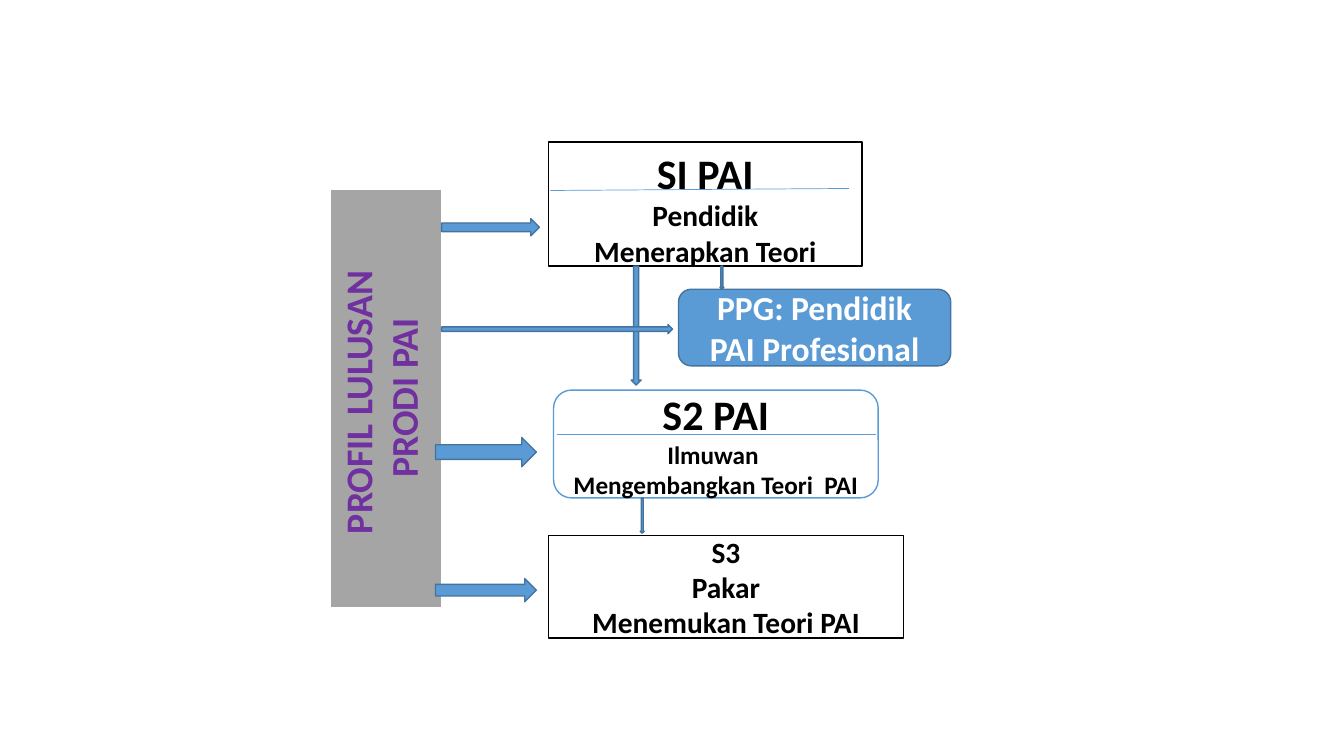
from lxml.etree import SubElement
from pptx import Presentation
from pptx.dml.color import RGBColor
from pptx.enum.shapes import MSO_CONNECTOR, MSO_SHAPE
from pptx.enum.text import MSO_ANCHOR, MSO_AUTO_SIZE, PP_ALIGN
from pptx.oxml.ns import qn
from pptx.util import Pt

EMU_PER_PX = 9144
COLOURS = {
    "white": "FFFFFF",
    "black": "000000",
    "grey": "A5A5A5",
    "blue": "5B9BD5",
    "dark_blue": "43739E",
    "purple": "7030A0",
}


def px(length):
    return length * EMU_PER_PX


def colour(name):
    return RGBColor.from_string(COLOURS[name])


def write_lines(shape, lines, color="black", font="Calibri", bold=True,
                anchor=MSO_ANCHOR.MIDDLE):
    frame = shape.text_frame
    frame.word_wrap = True
    frame.vertical_anchor = anchor
    for index, (text, size) in enumerate(lines):
        paragraph = frame.paragraphs[0] if index == 0 else frame.add_paragraph()
        paragraph.alignment = PP_ALIGN.CENTER
        run = paragraph.add_run()
        run.text = text
        run.font.name = font
        run.font.size = Pt(size)
        run.font.bold = bold
        run.font.color.rgb = colour(color)


class ProfileSlide:
    def __init__(self, presentation):
        self.slide = presentation.slides.add_slide(presentation.slide_layouts[6])

    def box(self, bounds, kind=MSO_SHAPE.RECTANGLE, fill="white", line="black", width=1):
        shape = self.slide.shapes.add_shape(kind, *map(px, bounds))
        shape.shadow.inherit = False
        shape.fill.solid()
        shape.fill.fore_color.rgb = colour(fill)
        shape.line.color.rgb = colour(line)
        shape.line.width = Pt(width)
        return shape

    def level(self, bounds, lines, anchor=MSO_ANCHOR.MIDDLE, color="black", **style):
        write_lines(self.box(bounds, **style), lines, color=color, anchor=anchor)

    def arrow(self, kind, *bounds):
        self.box(bounds, kind, fill="blue", line="dark_blue")

    def side_bar(self, bounds, lines):
        shape = self.box(bounds, fill="grey", line="white", width=1.5)
        write_lines(shape, lines, color="purple", anchor=MSO_ANCHOR.TOP)
        shape.text_frame.auto_size = MSO_AUTO_SIZE.SHAPE_TO_FIT_TEXT
        shape.element.txBody.find(qn("a:bodyPr")).set("vert", "vert270")

    def rule(self, *ends):
        connector = self.slide.shapes.add_connector(MSO_CONNECTOR.STRAIGHT, *map(px, ends))
        connector.line.color.rgb = colour("blue")
        connector.line.width = Pt(0.5)
        SubElement(connector.element.spPr, qn("a:effectLst"))


def main():
    presentation = Presentation()
    presentation.slide_width = px(1333)
    presentation.slide_height = px(750)
    profile = ProfileSlide(presentation)
    right, down = MSO_SHAPE.RIGHT_ARROW, MSO_SHAPE.DOWN_ARROW
    rounded = MSO_SHAPE.ROUNDED_RECTANGLE

    profile.side_bar((327, 187, 111, 416), [("PROFIL LULUSAN ", 27), ("PRODI PAI", 27)])
    profile.arrow(right, 432, 574, 100, 23)
    profile.arrow(right, 432, 434, 100, 29)
    profile.arrow(right, 438, 217, 97, 17)

    profile.level((544, 141, 311, 123),
                  [("SI PAI", 30), ("Pendidik", 21), ("Menerapkan Teori", 21)],
                  anchor=MSO_ANCHOR.TOP)
    profile.level((549, 387, 322, 107),
                  [("S2 PAI", 30), ("Ilmuwan ", 18), ("Mengembangkan Teori  PAI", 18)],
                  kind=rounded, line="blue")
    profile.rule(552, 431, 869, 431)
    profile.level((544, 531, 352, 102),
                  [("S3", 21), ("Pakar", 21), ("Menemukan Teori PAI", 21)])
    profile.level((673, 287, 270, 76), [("PPG: Pendidik PAI Profesional", 24)],
                  color="white", kind=rounded, fill="blue", line="dark_blue")

    profile.arrow(down, 714, 264, 4, 23)
    profile.arrow(down, 626, 264, 10, 118)
    profile.arrow(right, 438, 322, 229, 9)
    profile.arrow(down, 635, 494, 4, 35)
    profile.rule(546, 189, 842, 187)

    presentation.save("out.pptx")


if __name__ == "__main__":
    main()
